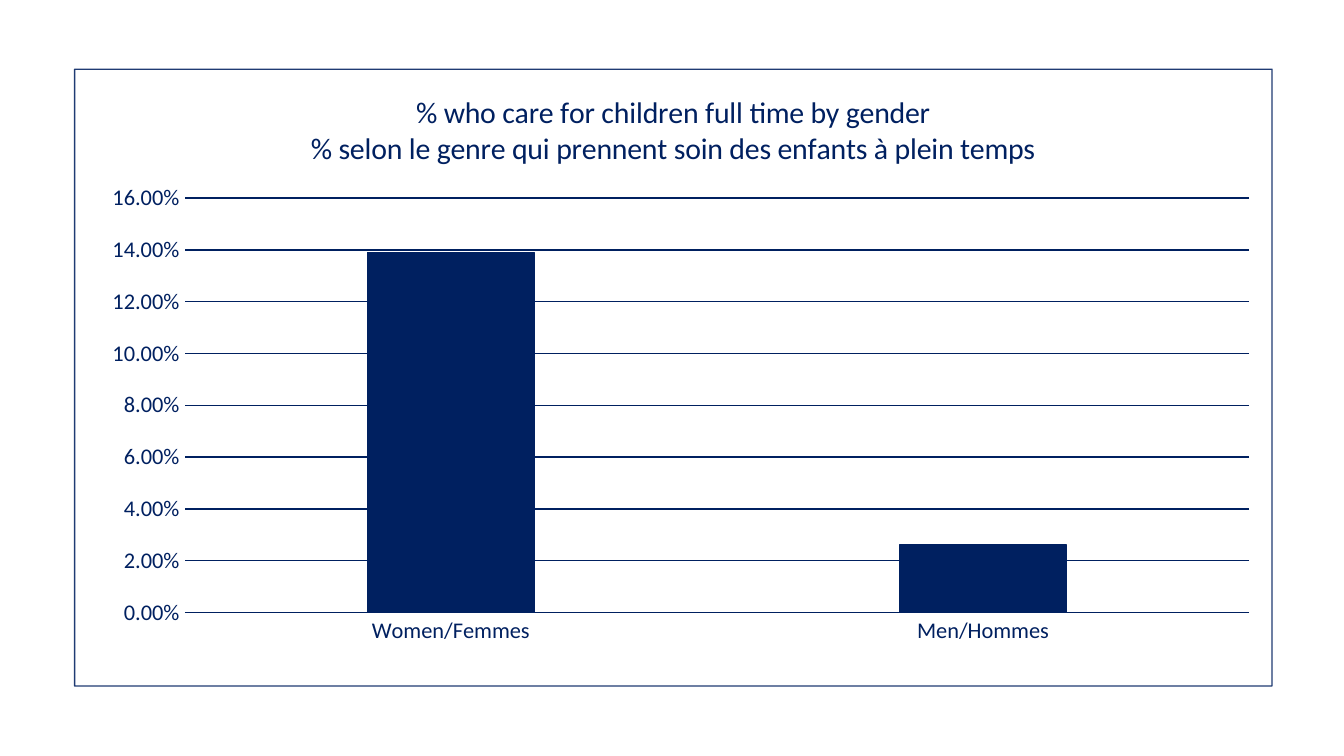
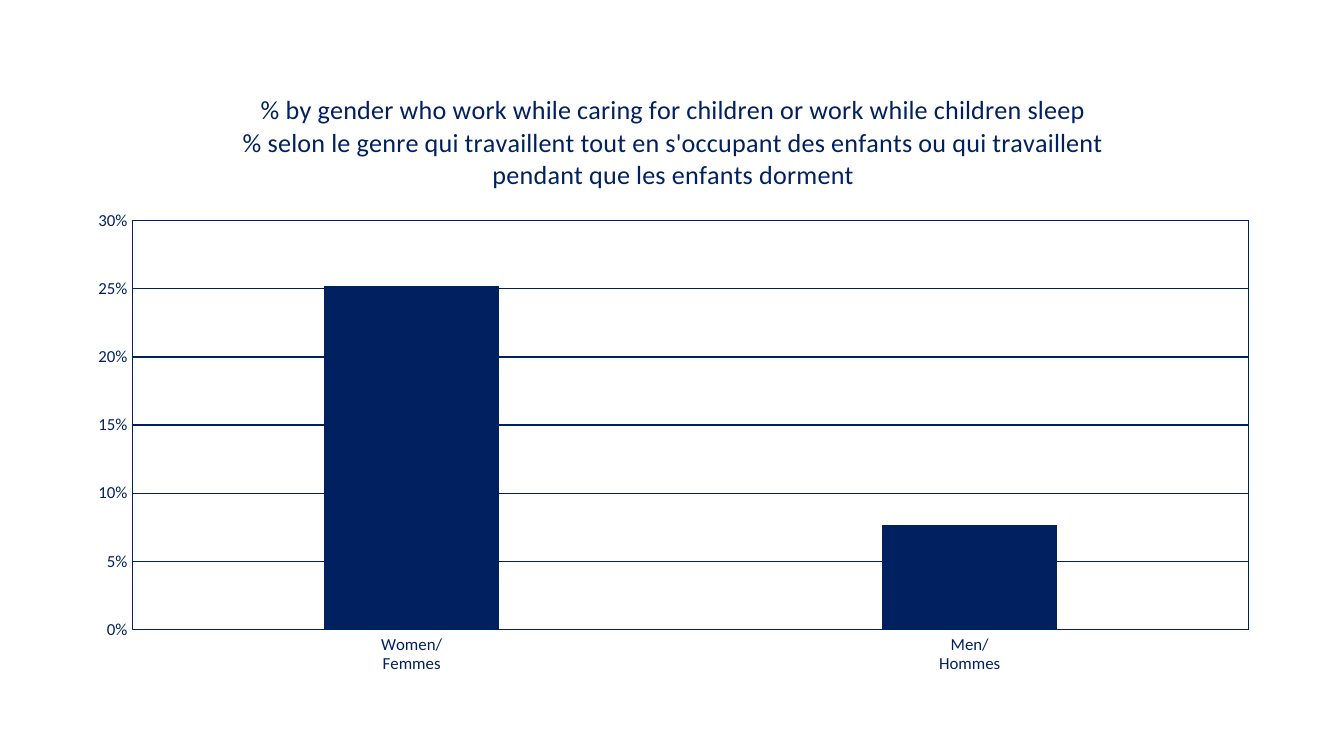
from dataclasses import dataclass

from lxml import etree
from pptx import Presentation
from pptx.chart.data import CategoryChartData
from pptx.dml.color import RGBColor
from pptx.enum.chart import XL_CHART_TYPE, XL_TICK_MARK
from pptx.oxml import parse_xml
from pptx.oxml.ns import nsdecls, qn
from pptx.util import Inches, Pt

COLUMNS = XL_CHART_TYPE.COLUMN_CLUSTERED
NO_TICKS = XL_TICK_MARK.NONE
BLANK_LAYOUT = 6


@dataclass(frozen=True)
class Theme:
    font: str = "Calibri"
    navy: str = "002060"
    base_size: float = 10
    line_width: float = 0.75


THEME = Theme()
NAVY = RGBColor.from_string(THEME.navy)
SLIDE_SIZE = (10, 10 * 9 / 16)
CHART_FRAME = (0.55, 0.51, 8.92, 4.6)

# Content: plot is left, top, width, height as shares of the chart
CHARTS = [
    {
        "title": ["% who care for children full time by gender",
                  "% selon le genre qui prennent soin des enfants à plein temps"],
        "values": {"Women/Femmes": 0.139, "Men/Hommes": 0.026},
        "format": "0.00%", "top": 0.16, "step": 0.02,
        "title_size": 16, "label_size": 12,
        "plot": (0.092, 0.209, 0.889, 0.672),
        "outlined": "chart",
    },
    {
        "title": ["% by gender who work while caring for children or work while children sleep",
                  "% selon le genre qui travaillent tout en s'occupant des enfants ou qui "
                  "travaillent pendant que les enfants dorment"],
        "values": {"Women/\nFemmes": 0.252, "Men/\nHommes": 0.077},
        "format": "0%", "top": 0.3, "step": 0.05,
        "title_size": 14, "label_size": 9,
        "plot": (0.049, 0.246, 0.931, 0.662),
        "outlined": "plot",
    },
]


def style_font(font, size):
    font.name = THEME.font
    font.size = Pt(size)
    font.bold = False
    font.color.rgb = NAVY


def style_line(line):
    line.color.rgb = NAVY
    line.width = Pt(THEME.line_width)


def outline(alpha):
    """Shape properties: no fill and a thin navy line."""
    return parse_xml(
        f'<c:spPr {nsdecls("c", "a")}><a:noFill/>'
        f'<a:ln w="{Pt(THEME.line_width)}"><a:solidFill><a:srgbClr val="{THEME.navy}">'
        f'<a:alpha val="{alpha * 1000}"/></a:srgbClr></a:solidFill></a:ln></c:spPr>')


def place_plot(plot_area, shares):
    """Fix the inner plot area at the given shares of the chart."""
    for old in plot_area.findall(qn("c:layout")):
        plot_area.remove(old)
    layout = etree.Element(qn("c:layout"))
    manual = etree.SubElement(layout, qn("c:manualLayout"))
    settings = [("layoutTarget", "inner"), ("xMode", "edge"), ("yMode", "edge")]
    settings += zip("xywh", shares)
    for tag, value in settings:
        etree.SubElement(manual, qn(f"c:{tag}")).set("val", str(value))
    plot_area.insert(0, layout)


def write_title(chart, lines, size):
    chart.has_title = True
    chart.chart_title.include_in_layout = False
    frame = chart.chart_title.text_frame
    frame.text = "\n".join(lines)
    for para in frame.paragraphs:
        style_font(para.font, size)
        for span in para.runs:
            style_font(span.font, size)


def style_axes(chart, content):
    for axis in (chart.category_axis, chart.value_axis):
        axis.major_tick_mark = axis.minor_tick_mark = NO_TICKS
        style_font(axis.tick_labels.font, content["label_size"])
    style_line(chart.category_axis.format.line)

    scale = chart.value_axis
    scale.minimum_scale = 0
    scale.maximum_scale = content["top"]
    scale.major_unit = content["step"]
    scale.format.line.fill.background()
    scale.has_major_gridlines = True
    style_line(scale.major_gridlines.format.line)
    scale.tick_labels.number_format = content["format"]
    scale.tick_labels.number_format_is_linked = False


def style_columns(plot, outlined):
    plot.gap_width = 219
    plot.overlap = -27
    plot.vary_by_categories = False
    series = plot.series[0]
    series.format.fill.solid()
    series.format.fill.fore_color.rgb = NAVY
    if outlined:
        style_line(series.format.line)


def add_chart_page(deck, content):
    page = deck.slides.add_slide(deck.slide_layouts[BLANK_LAYOUT])
    data = CategoryChartData(number_format=content["format"])
    data.categories = list(content["values"])
    data.add_series("Series 1", list(content["values"].values()))
    frame = map(Inches, CHART_FRAME)
    chart = page.shapes.add_chart(COLUMNS, *frame, data).chart

    chart.has_legend = False
    chart.font.name = THEME.font
    chart.font.size = Pt(THEME.base_size)
    write_title(chart, content["title"], content["title_size"])
    style_axes(chart, content)
    around_chart = content["outlined"] == "chart"
    style_columns(chart.plots[0], around_chart)

    # Plot position and the frame around the chart or the plot
    body = chart.element.find(qn("c:chart"))
    plot_area = body.find(qn("c:plotArea"))
    place_plot(plot_area, content["plot"])
    if around_chart:
        body.addnext(outline(alpha=88))
    else:
        plot_area.append(outline(alpha=100))


def main():
    deck = Presentation()
    deck.slide_width, deck.slide_height = map(Inches, SLIDE_SIZE)
    for content in CHARTS:
        add_chart_page(deck, content)
    deck.save("out.pptx")


if __name__ == "__main__":
    main()
